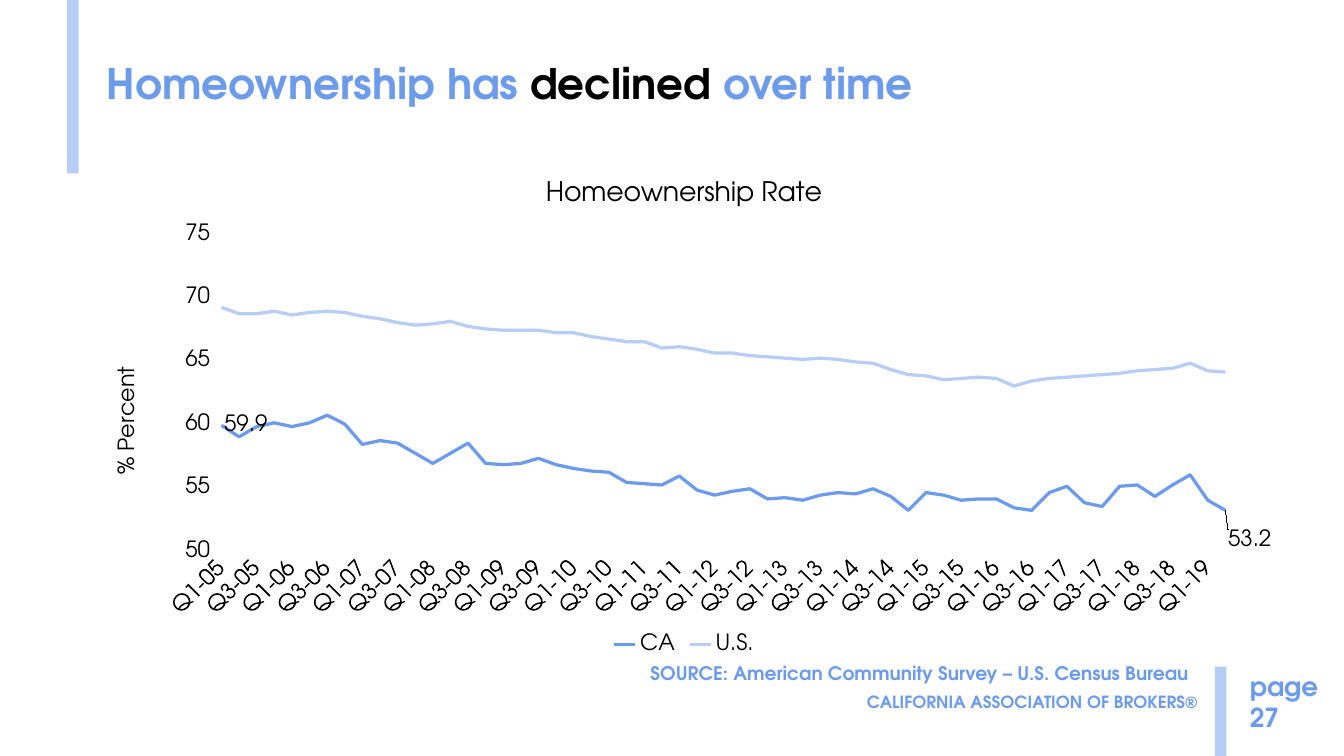
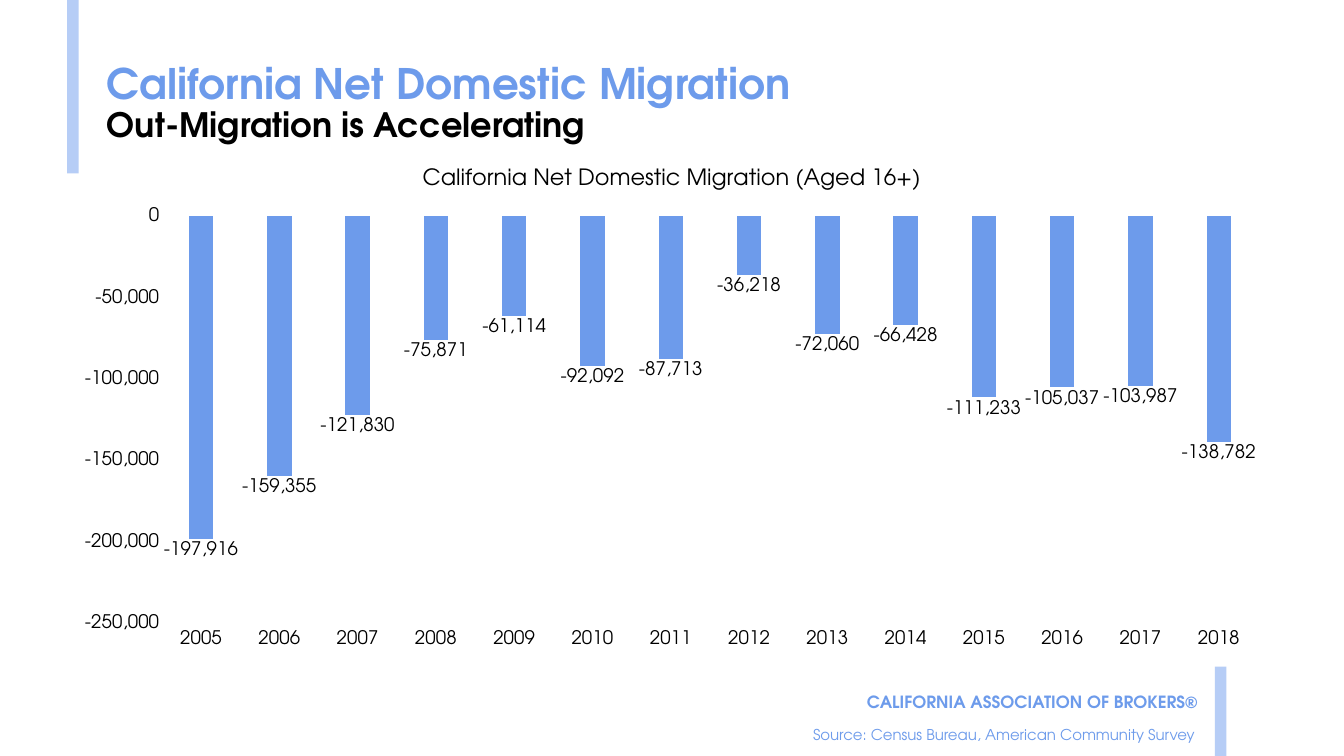
from dataclasses import dataclass
from itertools import islice, product

from lxml import etree
from pptx import Presentation
from pptx.chart.data import CategoryChartData
from pptx.dml.color import RGBColor
from pptx.enum.chart import (XL_CHART_TYPE, XL_LABEL_POSITION, XL_LEGEND_POSITION,
                             XL_MARKER_STYLE, XL_TICK_LABEL_POSITION, XL_TICK_MARK)
from pptx.enum.shapes import MSO_SHAPE
from pptx.enum.text import MSO_ANCHOR, PP_ALIGN
from pptx.oxml.ns import qn
from pptx.util import Inches, Pt

LINE, COLUMN = XL_CHART_TYPE.LINE, XL_CHART_TYPE.COLUMN_CLUSTERED
LABEL_RIGHT, LABEL_OUTSIDE = XL_LABEL_POSITION.RIGHT, XL_LABEL_POSITION.OUTSIDE_END
LEGEND_BOTTOM, TICKS_LOW = XL_LEGEND_POSITION.BOTTOM, XL_TICK_LABEL_POSITION.LOW
NO_TICK, NO_MARKER = XL_TICK_MARK.NONE, XL_MARKER_STYLE.NONE
LEFT, RIGHT = PP_ALIGN.LEFT, PP_ALIGN.RIGHT
TOP, MIDDLE = MSO_ANCHOR.TOP, MSO_ANCHOR.MIDDLE
RECTANGLE = MSO_SHAPE.RECTANGLE


@dataclass(frozen=True)
class Theme:
    font: str = "TeX Gyre Adventor"
    blue: RGBColor = RGBColor(0x6D, 0x9B, 0xEB)
    pale: RGBColor = RGBColor(0xB6, 0xCD, 0xF6)
    black: RGBColor = RGBColor(0, 0, 0)
    white: RGBColor = RGBColor(255, 255, 255)
    title: float = 45
    subtitle: float = 36
    page_number: float = 28
    source: float = 20
    footer: float = 18
    small_source: float = 16


THEME = Theme()


@dataclass(frozen=True)
class Frame:
    """A rectangle in inches."""
    left: float
    top: float
    width: float
    height: float

    def lengths(self):
        return [Inches(side) for side in (self.left, self.top, self.width, self.height)]


@dataclass(frozen=True)
class Span:
    text: str
    color: RGBColor = THEME.blue
    size: float = THEME.title


@dataclass(frozen=True)
class ChartSpec:
    kind: int
    title: str
    frame: Frame
    plot: Frame
    size: float
    categories: list
    series: dict
    number_format: str = "General"


# Bands that run off the top and bottom edges
BANDS = [Frame(1, -4.54, 0.17, 7.12), Frame(18.08, 9.92, 0.17, 7.12)]

# Chart data
QUARTERS = [f"Q{quarter}-{year:02d}"
            for year, quarter in islice(product(range(5, 20), range(1, 5)), 58)]
CALIFORNIA = [
    59.9, 59, 59.8, 60.1, 59.8, 60.1, 60.7, 60, 58.4, 58.7, 58.5, 57.7, 56.9, 57.7, 58.5,
    56.9, 56.8, 56.9, 57.3, 56.8, 56.5, 56.3, 56.2, 55.4, 55.3, 55.2, 55.9, 54.8, 54.4, 54.7,
    54.9, 54.1, 54.2, 54, 54.4, 54.6, 54.5, 54.9, 54.3, 53.2, 54.6, 54.4, 54, 54.1, 54.1,
    53.4, 53.2, 54.6, 55.1, 53.8, 53.5, 55.1, 55.2, 54.3, 55.2, 56, 54, 53.2]
UNITED_STATES = [
    69.2, 68.7, 68.7, 68.9, 68.6, 68.8, 68.9, 68.8, 68.5, 68.3, 68, 67.8, 67.9, 68.1, 67.7,
    67.5, 67.4, 67.4, 67.4, 67.2, 67.2, 66.9, 66.7, 66.5, 66.5, 66, 66.1, 65.9, 65.6, 65.6,
    65.4, 65.3, 65.2, 65.1, 65.2, 65.1, 64.9, 64.8, 64.3, 63.9, 63.8, 63.5, 63.6, 63.7, 63.6,
    63, 63.4, 63.6, 63.7, 63.8, 63.9, 64, 64.2, 64.3, 64.4, 64.8, 64.2, 64.1]
MIGRATION = [-197916, -159355, -121830, -75871, -61114, -92092, -87713, -36218, -72060,
             -66428, -111233, -105037, -103987, -138782]

OWNERSHIP_CHART = ChartSpec(
    LINE, "Homeownership Rate", Frame(1.49, 2.38, 17.43, 7.43), Frame(3.17, 3.48, 15.25, 4.72),
    24, QUARTERS, {"CA": CALIFORNIA, "U.S.": UNITED_STATES})
MIGRATION_CHART = ChartSpec(
    COLUMN, "California Net Domestic Migration (Aged 16+)", Frame(0.9, 2.21, 18.19, 7.58),
    Frame(2.41, 3.22, 16.31, 6.06), 20, [str(year) for year in range(2005, 2019)],
    {"Series 1": MIGRATION}, "#,##0")


# Text and page furniture
def set_font(font, size: float, color: RGBColor, bold: bool) -> None:
    font.name, font.size, font.bold = THEME.font, Pt(size), bold
    font.color.rgb = color


def add_text(page, frame: Frame, text: str, *, size: float, bold: bool = True,
             align=LEFT, anchor=TOP) -> None:
    box = page.shapes.add_textbox(*frame.lengths())
    box.text_frame.word_wrap = True
    box.text_frame.vertical_anchor = anchor
    box.text_frame.text = text
    for para in box.text_frame.paragraphs:
        para.alignment = align
        for span in para.runs:
            set_font(span.font, size, THEME.blue, bold)


def add_title(page, frame: Frame, *lines: list) -> None:
    box = page.shapes.add_textbox(*frame.lengths())
    box.text_frame.word_wrap = True
    para = box.text_frame.paragraphs[0]
    para.line_spacing = 0.9
    for number, line in enumerate(lines):
        if number:
            para.add_line_break()
        for part in line:
            span = para.add_run()
            span.text = part.text
            set_font(span.font, part.size, part.color, True)


def add_page(deck):
    page = deck.slides.add_slide(deck.slide_layouts[6])
    for frame in BANDS:
        band = page.shapes.add_shape(RECTANGLE, *frame.lengths())
        band.shadow.inherit = False
        band.fill.solid()
        band.fill.fore_color.rgb = THEME.pale
        band.line.fill.background()
    add_text(page, Frame(12.67, 10.25, 5.25, 0.4), "CALIFORNIA ASSOCIATION OF BROKERS®",
             size=THEME.footer, align=RIGHT, anchor=MIDDLE)
    return page


# Charts
def manual_layout(**values):
    layout = etree.Element(qn("c:layout"))
    manual = etree.SubElement(layout, qn("c:manualLayout"))
    for name, value in values.items():
        etree.SubElement(manual, qn(f"c:{name}"), val=str(value))
    return layout


def place_plot(chart, spec: ChartSpec) -> None:
    area = chart.element.find(f".//{qn('c:plotArea')}")
    for layout in area.findall(qn("c:layout")):
        area.remove(layout)
    outer, inner = spec.frame, spec.plot
    area.insert(0, manual_layout(
        layoutTarget="inner", xMode="edge", yMode="edge",
        x=(inner.left - outer.left) / outer.width, y=(inner.top - outer.top) / outer.height,
        w=inner.width / outer.width, h=inner.height / outer.height))


def write_chart_title(title, text: str, size: float) -> None:
    title.text_frame.text = text
    set_font(title.text_frame.paragraphs[0].runs[0].font, size, THEME.black, False)


def add_chart(page, spec: ChartSpec):
    data = CategoryChartData(number_format=spec.number_format)
    data.categories = spec.categories
    for name, values in spec.series.items():
        data.add_series(name, values)
    chart = page.shapes.add_chart(spec.kind, *spec.frame.lengths(), data).chart
    set_font(chart.font, spec.size, THEME.black, False)
    chart.has_title, chart.has_legend = True, False
    write_chart_title(chart.chart_title, spec.title, spec.size * 1.2)
    chart.plots[0].vary_by_categories = False
    for axis in (chart.category_axis, chart.value_axis):
        axis.major_tick_mark = axis.minor_tick_mark = NO_TICK
        axis.has_major_gridlines = False
        set_font(axis.tick_labels.font, spec.size, THEME.black, False)
    chart.category_axis.tick_label_position = TICKS_LOW
    chart.category_axis.format.line.color.rgb = THEME.white
    chart.category_axis.format.line.width = Pt(0.75)
    chart.value_axis.format.line.fill.background()
    chart.value_axis.tick_labels.number_format = spec.number_format
    chart.value_axis.tick_labels.number_format_is_linked = False
    place_plot(chart, spec)
    return chart


def lower_last_label(chart) -> None:
    """Drop the last point label below its point and tie it with a leader line."""
    labels = chart.element.find(f".//{qn('c:ser')}/{qn('c:dLbls')}")
    labels.findall(qn("c:dLbl"))[-1].insert(1, manual_layout(x=0, y=0.06))
    namespace = "http://schemas.microsoft.com/office/drawing/2012/chart"
    extensions = etree.SubElement(labels, qn("c:extLst"))
    extension = etree.SubElement(extensions, qn("c:ext"), nsmap={"c15": namespace},
                                 uri="{CE6537A1-D6FC-4f65-9D91-7224C49458BB}")
    etree.SubElement(extension, f"{{{namespace}}}showLeaderLines", val="1")


def add_ownership_chart(page) -> None:
    spec = OWNERSHIP_CHART
    chart = add_chart(page, spec)
    chart.value_axis.minimum_scale = 50
    write_chart_title(chart.value_axis.axis_title, "% Percent", spec.size)
    chart.has_legend = True
    chart.legend.position = LEGEND_BOTTOM
    chart.legend.include_in_layout = False
    set_font(chart.legend.font, spec.size, THEME.black, False)
    for series, color in zip(chart.plots[0].series, (THEME.blue, THEME.pale)):
        series.smooth = False
        series.marker.style = NO_MARKER
        series.format.line.color.rgb = color
        series.format.line.width = Pt(3.5)
    california = chart.plots[0].series[0]
    california.data_labels.show_value = False
    for index in (0, len(QUARTERS) - 1):
        label = california.points[index].data_label
        set_font(label.font, spec.size, THEME.black, False)
        label.position = LABEL_RIGHT
    lower_last_label(chart)
    # Slanted labels, every second quarter
    axis = chart.element.find(f".//{qn('c:catAx')}")
    axis.find(f"{qn('c:txPr')}/{qn('a:bodyPr')}").set("rot", "-2700000")
    skip = etree.Element(qn("c:tickLblSkip"), val="2")
    axis.find(qn("c:noMultiLvlLbl")).addprevious(skip)


def add_migration_chart(page) -> None:
    spec = MIGRATION_CHART
    chart = add_chart(page, spec)
    plot = chart.plots[0]
    plot.gap_width, plot.overlap = 219, -27
    series = plot.series[0]
    series.invert_if_negative = False
    series.format.fill.solid()
    series.format.fill.fore_color.rgb = THEME.blue
    labels = series.data_labels
    labels.show_value = True
    labels.position = LABEL_OUTSIDE
    labels.number_format, labels.number_format_is_linked = spec.number_format, False
    set_font(labels.font, spec.size, THEME.black, False)


# Slides
def build_ownership_page(deck) -> None:
    page = add_page(deck)
    add_title(page, Frame(1.49, 0.89, 12.6, 0.78),
              [Span("Homeownership has "), Span("declined ", THEME.black), Span("over time")])
    add_ownership_chart(page)
    add_text(page, Frame(18.5, 9.92, 1.5, 1.04), "page\n27", size=THEME.page_number)
    add_text(page, Frame(9.58, 9.8, 8.33, 0.44),
             "SOURCE: American Community Survey – U.S. Census Bureau", size=THEME.source)


def build_migration_page(deck) -> None:
    page = add_page(deck)
    add_title(page, Frame(1.49, 0.89, 13.85, 1.33),
              [Span("California Net Domestic Migration")],
              [Span("Out-Migration is Accelerating", THEME.black, THEME.subtitle)])
    add_migration_chart(page)
    add_text(page, Frame(12, 10.75, 6.08, 0.37),
             "Source: Census Bureau, American Community Survey",
             size=THEME.small_source, bold=False)


def main() -> None:
    deck = Presentation()
    deck.slide_width, deck.slide_height = Inches(20), Inches(11.25)
    build_ownership_page(deck)
    build_migration_page(deck)
    deck.save("out.pptx")


if __name__ == "__main__":
    main()
